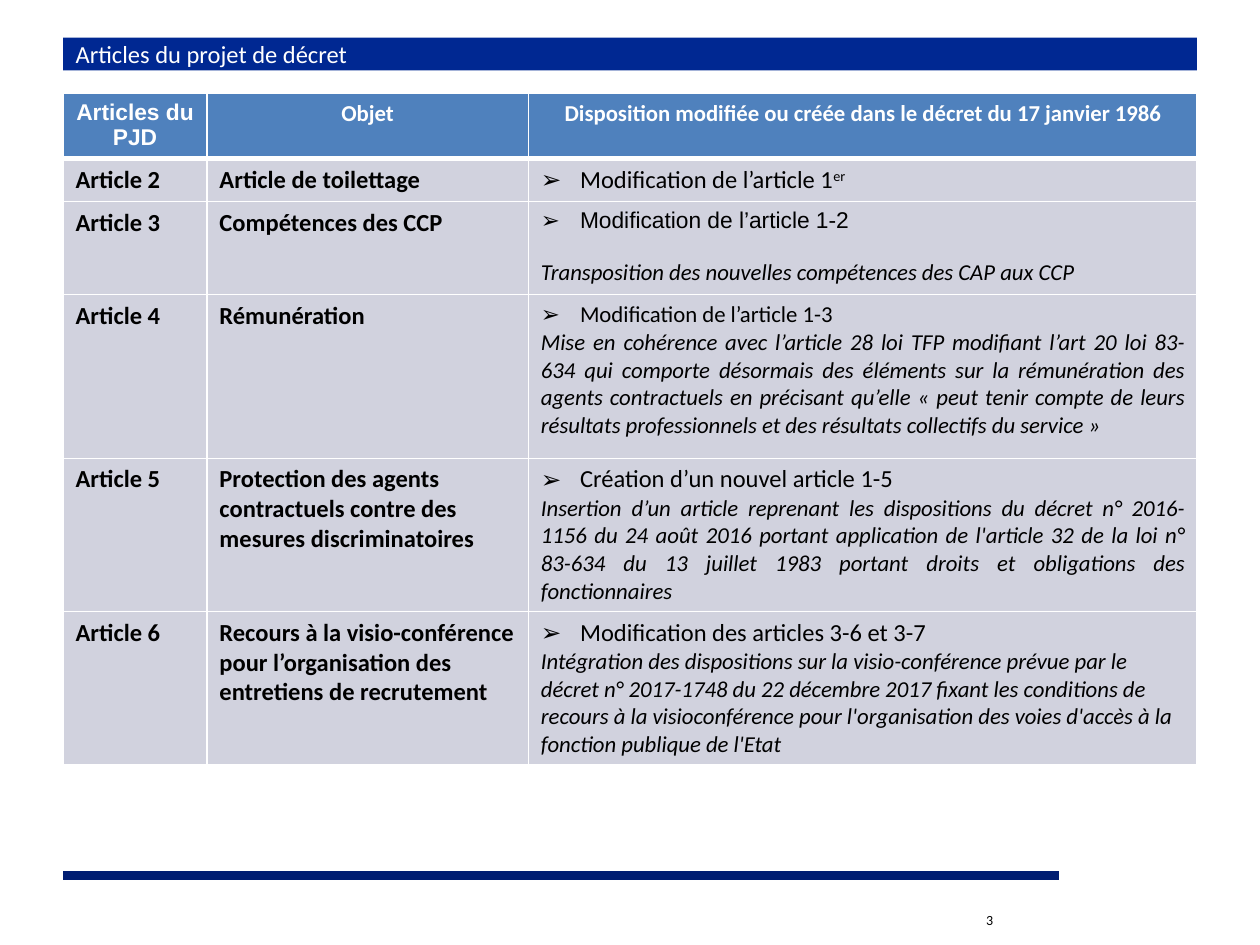
from lxml import etree
from pptx import Presentation
from pptx import util as u
from pptx.dml.color import RGBColor
from pptx.enum import shapes, text
from pptx.oxml import ns

WHITE = RGBColor(0xFF, 0xFF, 0xFF)
BLACK = RGBColor(0, 0, 0)
TITLE_BLUE = RGBColor(0x00, 0x28, 0x92)
RULE_BLUE = RGBColor(0x00, 0x1D, 0x72)
HEADER_BLUE = RGBColor(0x4F, 0x81, 0xBD)
ROW_GREY = RGBColor(0xD1, 0xD2, 0xDE)

LEFT, WIDTH = 1.27, 22.86
COLUMN_WIDTHS = (2.9, 6.48, 13.48)
ROW_HEIGHTS = (1.32, 0.86, 1.88, 3.3, 3.07, 3.08)
JUSTIFY, ALIGN_LEFT = text.PP_ALIGN.JUSTIFY, text.PP_ALIGN.LEFT

LABEL = {"name": "Calibri", "size": u.Pt(14), "bold": True, "italic": False}
ITEM = {**LABEL, "bold": False}
SMALL_ITEM = {**ITEM, "size": u.Pt(13)}
ARIAL_ITEM = {**SMALL_ITEM, "name": "Arial"}
NOTE = {**SMALL_ITEM, "italic": True}
HEADING = {**LABEL, "size": u.Pt(13)}

HEADINGS = (
    ("Articles du PJD", {**HEADING, "name": "Arial"}),
    ("Objet", HEADING),
    ("Disposition modifiée ou créée dans le décret du 17 janvier 1986", HEADING),
)
ARTICLES = (
    ("Article 2", "Article de toilettage",
     "Modification de l’article 1", "er", ITEM, "", JUSTIFY, 0),
    ("Article 3", "Compétences des CCP",
     "Modification de l’article 1-2", "", ARIAL_ITEM,
     "Transposition des nouvelles compétences des CAP aux CCP", JUSTIFY, 15),
    ("Article 4", "Rémunération",
     "Modification de l’article 1-3", "", SMALL_ITEM,
     "Mise en cohérence avec l’article 28 loi TFP modifiant l’art 20 loi 83-634 "
     "qui comporte désormais des éléments sur la rémunération des agents "
     "contractuels en précisant qu’elle « peut tenir compte de leurs résultats "
     "professionnels et des résultats collectifs du service »", JUSTIFY, 0),
    ("Article 5", "Protection des agents contractuels contre des mesures discriminatoires",
     "Création d’un nouvel article 1-5", "", ITEM,
     "Insertion d’un article reprenant les dispositions du décret n° 2016-1156 "
     "du 24 août 2016 portant application de l'article 32 de la loi n° 83-634 "
     "du 13 juillet 1983 portant droits et obligations des fonctionnaires", JUSTIFY, 0),
    ("Article 6", "Recours à la visio-conférence pour l’organisation des entretiens de recrutement",
     "Modification des articles 3-6 et 3-7", "", ITEM,
     "Intégration des dispositions sur la visio-conférence prévue par le décret "
     "n° 2017-1748 du 22 décembre 2017 fixant les conditions de recours à la "
     "visioconférence pour l'organisation des voies d'accès à la fonction "
     "publique de l'Etat", ALIGN_LEFT, 0),
)


def set_values(target, values):
    """Set each attribute of the target from a dict."""
    for name, value in values.items():
        setattr(target, name, value)


def write(paragraph, words, style, color=BLACK, alignment=ALIGN_LEFT):
    """Add a formatted run to a paragraph and return it."""
    paragraph.alignment = alignment
    run = paragraph.add_run()
    run.text = words
    set_values(run.font, style)
    run.font.color.rgb = color
    return run


def add_bullet(paragraph):
    """Give a paragraph an arrow bullet with a hanging indent."""
    properties = paragraph._p.get_or_add_pPr()
    indent = u.Cm(0.79)
    properties.set("marL", str(indent))
    properties.set("indent", str(-indent))
    etree.SubElement(properties, ns.qn("a:buFont"), typeface="Arial")
    etree.SubElement(properties, ns.qn("a:buChar"), char="➢")


def style_cell(cell, color, bottom_width):
    """Draw white borders round a cell and fill it."""
    properties = cell._tc.get_or_add_tcPr()
    for side, width in (("L", 1), ("R", 1), ("T", 1), ("B", bottom_width)):
        line = etree.SubElement(properties, ns.qn(f"a:ln{side}"), w=str(u.Pt(width)))
        fill = etree.SubElement(line, ns.qn("a:solidFill"))
        etree.SubElement(fill, ns.qn("a:srgbClr"), val=str(WHITE))
    cell.fill.solid()
    cell.fill.fore_color.rgb = color


def fill_provision(frame, item, superscript, style, note, alignment, gap):
    """Write the bulleted provision and its explanatory note."""
    paragraph = frame.paragraphs[0]
    add_bullet(paragraph)
    write(paragraph, item, style, alignment=alignment)
    if superscript:
        run = write(paragraph, superscript, style, alignment=alignment)
        run._r.get_or_add_rPr().set("baseline", "30000")
    if note:
        paragraph = frame.add_paragraph()
        paragraph.space_before = u.Pt(gap)
        write(paragraph, note, NOTE, alignment=alignment)


def place_title(slide, left, top, width, height):
    """Turn the title placeholder into the blue banner."""
    title = slide.shapes.title
    set_values(title, {"left": u.Cm(left), "top": u.Cm(top),
                       "width": u.Cm(width), "height": u.Cm(height)})
    title.fill.solid()
    title.fill.fore_color.rgb = TITLE_BLUE
    set_values(title.text_frame, {"auto_size": text.MSO_AUTO_SIZE.NONE,
                                  "vertical_anchor": text.MSO_ANCHOR.MIDDLE,
                                  "word_wrap": True})
    write(title.text_frame.paragraphs[0], "Articles du projet de décret", ITEM, WHITE)


def add_articles_table(slide, left, top, width, height):
    """Add the table of articles."""
    table = slide.shapes.add_table(
        len(ROW_HEIGHTS), len(COLUMN_WIDTHS),
        u.Cm(left), u.Cm(top), u.Cm(width), u.Cm(height)).table
    table.horz_banding = False
    for column, column_width in zip(table.columns, COLUMN_WIDTHS):
        column.width = u.Cm(column_width)
    for row, row_height in zip(table.rows, ROW_HEIGHTS):
        row.height = u.Cm(row_height)
    for cell, (heading, style) in zip(table.rows[0].cells, HEADINGS):
        style_cell(cell, HEADER_BLUE, 3)
        write(cell.text_frame.paragraphs[0], heading, style, WHITE, text.PP_ALIGN.CENTER)
    for index, (article, subject, *provision) in enumerate(ARTICLES, 1):
        cells = list(table.rows[index].cells)
        for cell in cells:
            style_cell(cell, ROW_GREY, 1)
        for cell, words in zip(cells, (article, subject)):
            write(cell.text_frame.paragraphs[0], words, LABEL)
        fill_provision(cells[2].text_frame, *provision)


def add_footer(slide, left, top, width, height):
    """Add the bottom rule and the page number."""
    rule = slide.shapes.add_connector(
        shapes.MSO_CONNECTOR.STRAIGHT,
        u.Cm(left + width), u.Cm(top), u.Cm(left), u.Cm(top))
    rule.line.color.rgb = RULE_BLUE
    rule.line.width = u.Pt(5)
    etree.SubElement(rule._element.spPr, ns.qn("a:effectLst"))
    number = slide.shapes.add_textbox(
        u.Cm(left + width - 1.71), u.Cm(top + 0.6), u.Cm(5.74), u.Cm(height - 0.6))
    number.text_frame.word_wrap = True
    write(number.text_frame.paragraphs[0], "3", {**ITEM, "size": u.Pt(8)})


def main():
    """Build and save the presentation."""
    presentation = Presentation()
    set_values(presentation, {"slide_width": u.Cm(25.4), "slide_height": u.Cm(19.05)})
    slide = presentation.slides.add_slide(presentation.slide_layouts[5])
    place_title(slide, LEFT, 0.76, WIDTH, 0.66)
    add_articles_table(slide, LEFT, 1.88, WIDTH, sum(ROW_HEIGHTS))
    add_footer(slide, LEFT, 17.65, 20.07, 1.4)
    presentation.save("out.pptx")


if __name__ == "__main__":
    main()
